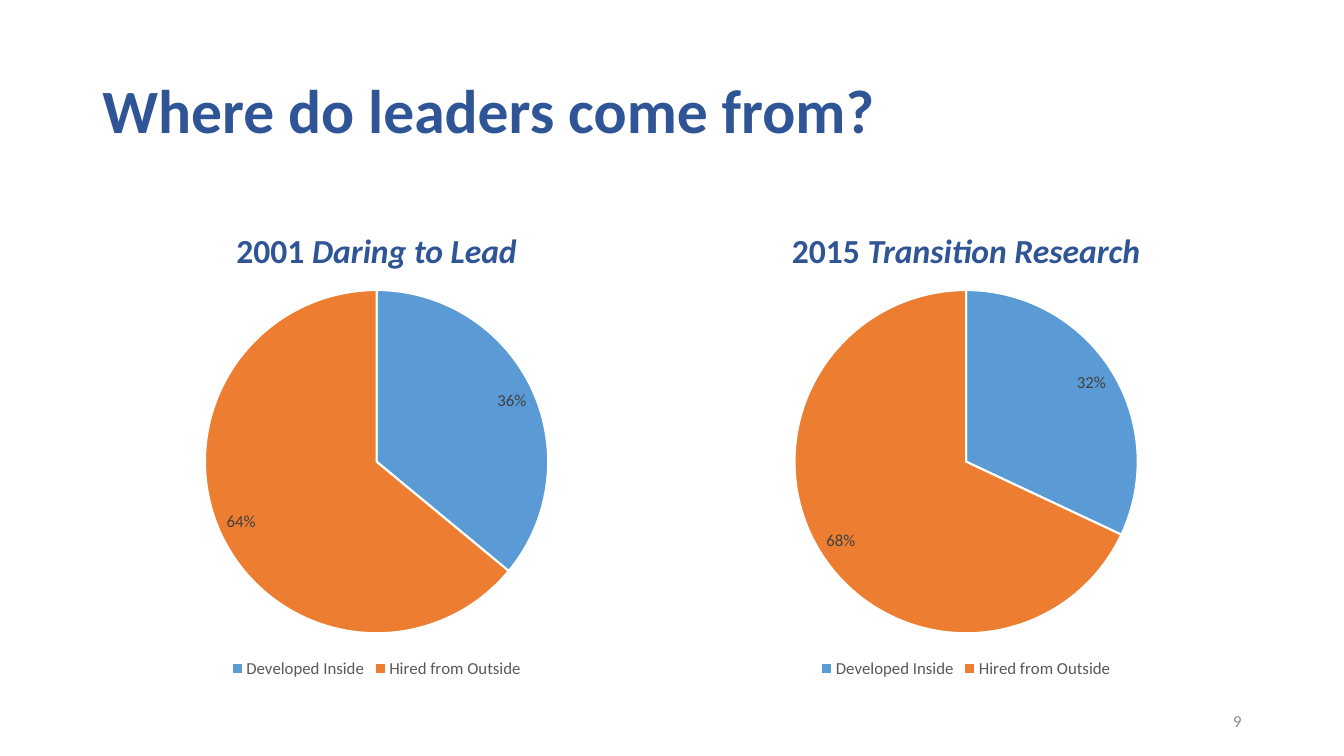
import pptx
import pptx.chart.data
import pptx.dml.color
import pptx.enum.chart
import pptx.enum.text
import pptx.util

Pt = pptx.util.Pt
RGBColor = pptx.dml.color.RGBColor
ALIGN = pptx.enum.text.PP_ALIGN
ANCHOR = pptx.enum.text.MSO_ANCHOR

FONT = "Calibri"
NAVY = RGBColor(0x2F, 0x55, 0x97)
BLUE = RGBColor(0x5B, 0x9B, 0xD5)
ORANGE = RGBColor(0xED, 0x7D, 0x31)
WHITE = RGBColor(0xFF, 0xFF, 0xFF)
LABEL_GRAY = RGBColor(0x40, 0x40, 0x40)
LEGEND_GRAY = RGBColor(0x59, 0x59, 0x59)
NUMBER_GRAY = RGBColor(0x8C, 0x8C, 0x8C)

CATEGORIES = ["Developed Inside", "Hired from Outside"]
STUDIES = [
    (66, 406, "2001 ", "Daring to Lead", (0.36, 0.64)),
    (486, 408.25, "2015 ", "Transition Research", (0.32, 0.68)),
]


def style_font(font, size, color, bold=False):
    """Apply the slide typeface with a size, colour and weight."""
    font.name = FONT
    font.size = Pt(size)
    font.color.rgb = color
    font.bold = bold


def add_text(slide, box, text, size, color, anchor, align, bold=False):
    """Add a wrapped one-paragraph text box and return its paragraph."""
    shape = slide.shapes.add_textbox(*map(Pt, box))
    text_frame = shape.text_frame
    text_frame.word_wrap = True
    text_frame.vertical_anchor = anchor
    text_frame.text = text
    paragraph = text_frame.paragraphs[0]
    paragraph.alignment = align
    style_font(paragraph.runs[0].font, size, color, bold)
    return paragraph


def add_heading(slide, left, width, year, study):
    """Add a study heading: upright year, italic study name."""
    paragraph = add_text(slide, (left, 132.25, width, 65), year, 24, NAVY,
                         ANCHOR.BOTTOM, ALIGN.CENTER, True)
    paragraph.line_spacing = 0.9
    paragraph.space_before = Pt(10)
    run = paragraph.add_run()
    run.text = study
    style_font(run.font, 24, NAVY, True)
    run.font.italic = True


def add_pie(slide, left, width, shares):
    """Add a pie chart of leader origins with percentage labels."""
    data = pptx.chart.data.CategoryChartData(number_format="0%")
    data.categories = CATEGORIES
    data.add_series("Series 1", shares)
    chart = slide.shapes.add_chart(
        pptx.enum.chart.XL_CHART_TYPE.PIE,
        Pt(left), Pt(197.25), Pt(width), Pt(290.25), data).chart
    chart.has_title = False
    style_font(chart.font, 12, LEGEND_GRAY)
    chart.has_legend = True
    chart.legend.position = pptx.enum.chart.XL_LEGEND_POSITION.BOTTOM
    chart.legend.include_in_layout = False
    style_font(chart.legend.font, 12, LEGEND_GRAY)

    plot = chart.plots[0]
    plot.vary_by_categories = True
    for index, color in enumerate((BLUE, ORANGE)):
        slice_format = plot.series[0].points[index].format
        slice_format.fill.solid()
        slice_format.fill.fore_color.rgb = color
        slice_format.line.color.rgb = WHITE
        slice_format.line.width = Pt(1.5)

    plot.has_data_labels = True
    labels = plot.data_labels
    labels.show_value = True
    labels.show_percentage = False
    labels.number_format = "0%"
    labels.number_format_is_linked = False
    labels.position = pptx.enum.chart.XL_LABEL_POSITION.INSIDE_END
    style_font(labels.font, 12, LABEL_GRAY)


def main():
    """Build the slide and save it."""
    presentation = pptx.Presentation()
    presentation.slide_width = Pt(960)
    presentation.slide_height = Pt(540)
    slide = presentation.slides.add_slide(presentation.slide_layouts[6])

    title = add_text(slide, (66, 28.75, 828, 104.5),
                     "Where do leaders come from?", 44, NAVY,
                     ANCHOR.MIDDLE, ALIGN.LEFT, True)
    title.line_spacing = 0.9
    for left, width, year, study, shares in STUDIES:
        add_heading(slide, left, width, year, study)
        add_pie(slide, left, width, shares)
    add_text(slide, (678, 500.5, 216, 28.75), "9", 12, NUMBER_GRAY,
             ANCHOR.MIDDLE, ALIGN.RIGHT)

    presentation.save("out.pptx")


if __name__ == "__main__":
    main()
